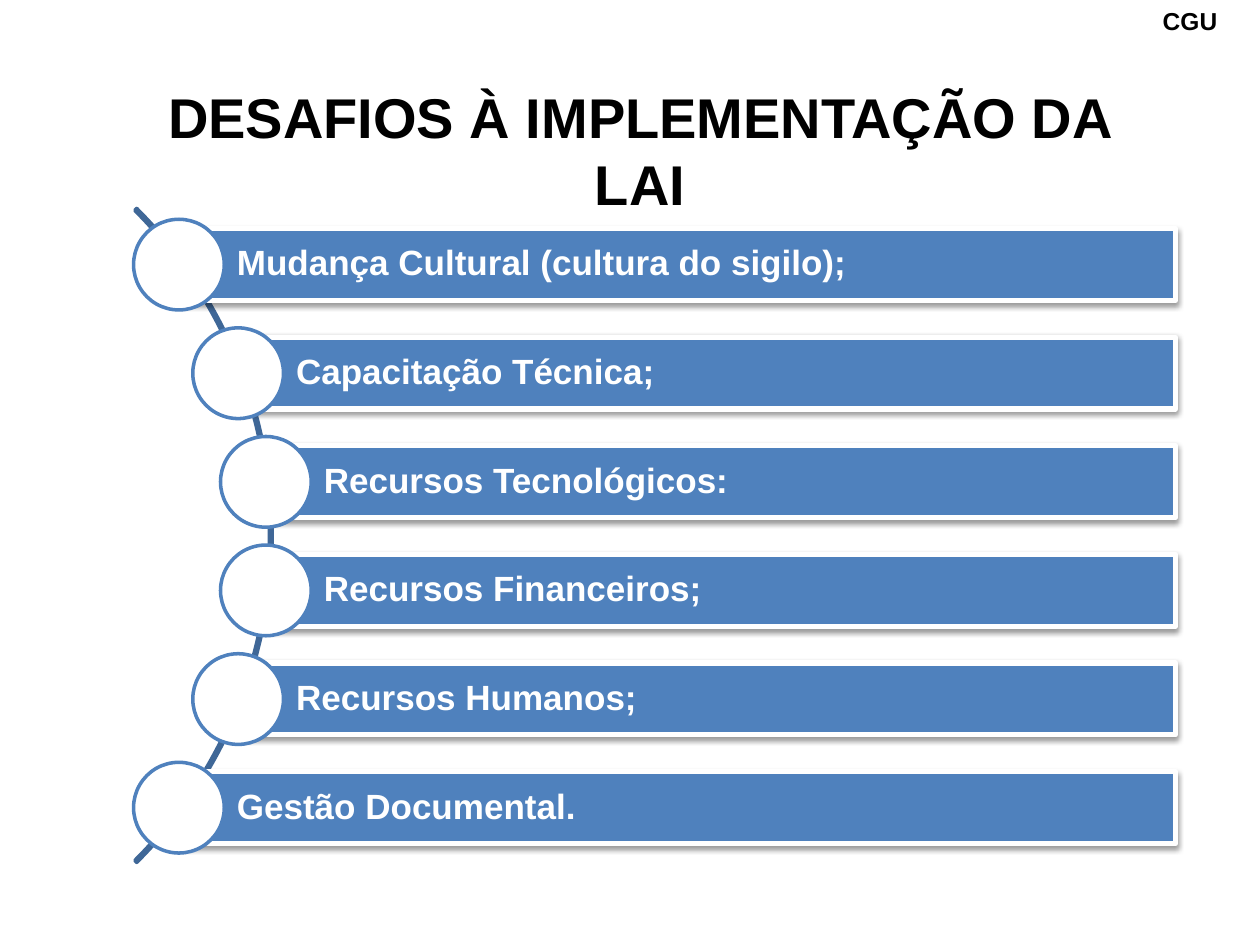
from pptx import Presentation
from pptx.dml.color import RGBColor
from pptx.enum.shapes import MSO_SHAPE
from pptx.enum.text import MSO_ANCHOR, PP_ALIGN
from pptx.oxml import parse_xml
from pptx.oxml.ns import nsdecls, qn
from pptx.util import Inches, Pt

ARC, BAR, CIRCLE = MSO_SHAPE.BLOCK_ARC, MSO_SHAPE.RECTANGLE, MSO_SHAPE.OVAL
MIDDLE = MSO_ANCHOR.MIDDLE
LEFT, CENTER = PP_ALIGN.LEFT, PP_ALIGN.CENTER

THEME = {
    "font": "Arial",
    "black": RGBColor(0x00, 0x00, 0x00),
    "white": RGBColor(0xFF, 0xFF, 0xFF),
    "blue": RGBColor(0x4F, 0x81, 0xBD),
    "arc": RGBColor(0x3F, 0x67, 0x97),
    "title": Pt(32),
    "item": Pt(20),
    "label": Pt(14),
}

CHALLENGES = [
    ("Mudança Cultural (cultura do sigilo);", 1.42),
    ("Capacitação Técnica;", 1.89),
    ("Recursos Tecnológicos:", 2.11),
    ("Recursos Financeiros;", 2.11),
    ("Recursos Humanos;", 1.89),
    ("Gestão Documental.", 1.42),
]
BAR_RIGHT, BAR_HEIGHT = 9.33, 0.57
FIRST_CENTER, LAST_CENTER = 2.1, 6.41
DIAMETER = 0.72
PITCH = (LAST_CENTER - FIRST_CENTER) / (len(CHALLENGES) - 1)

SHADOW = f"""<a:outerShdw {nsdecls("a")} blurRad="39370" dist="20320" dir="5400000" rotWithShape="0">
<a:srgbClr val="000000"><a:alpha val="38000"/></a:srgbClr></a:outerShdw>"""


def write_text(shape, text, size, color, alignment):
    frame = shape.text_frame
    frame.text = text
    paragraph = frame.paragraphs[0]
    paragraph.alignment = alignment
    font_format = {"name": THEME["font"], "size": THEME[size], "bold": True}
    for name, value in font_format.items():
        setattr(paragraph.font, name, value)
    paragraph.font.color.rgb = THEME[color]
    return frame


def add_outlined(kind, left, top, width, height, fill, line, line_width):
    shape = slide.shapes.add_shape(
        kind, Inches(left), Inches(top), Inches(width), Inches(height)
    )
    shape.shadow.inherit = False
    if fill:
        shape.fill.solid()
        shape.fill.fore_color.rgb = THEME[fill]
    else:
        shape.fill.background()
    shape.line.color.rgb = THEME[line]
    shape.line.width = Pt(line_width)
    return shape


presentation = Presentation()
presentation.slide_width = Inches(10)
presentation.slide_height = Inches(7.5)
slide = presentation.slides.add_slide(presentation.slide_layouts[5])

label = slide.shapes.add_textbox(Inches(9.13), 0, Inches(0.87), Inches(0.34))
write_text(label, "CGU", "label", "black", LEFT).word_wrap = True

title = slide.shapes.title
title_place = {
    "left": Inches(0.83),
    "top": Inches(0.52),
    "width": Inches(8.5),
    "height": Inches(1.33),
}
for name, value in title_place.items():
    setattr(title, name, value)
title_frame = write_text(
    title, "DESAFIOS À IMPLEMENTAÇÃO DA LAI", "title", "black", CENTER
)
title_frame.word_wrap = True
title_frame.vertical_anchor = MIDDLE

arc = add_outlined(ARC, -5.18, 0.58, 7.34, 7.34, None, "arc", 2)
for index, value in enumerate((189, 27, 0.003)):
    arc.adjustments[index] = value

bar_format = {
    "margin_left": Inches(0.46),
    "margin_right": Inches(0.06),
    "margin_top": Inches(0.06),
    "margin_bottom": Inches(0.06),
    "vertical_anchor": MIDDLE,
    "word_wrap": True,
}
for row, (text, left) in enumerate(CHALLENGES):
    center = FIRST_CENTER + row * PITCH
    bar = add_outlined(
        BAR, left, center - BAR_HEIGHT / 2, BAR_RIGHT - left, BAR_HEIGHT,
        "blue", "white", 3,
    )
    bar.element.spPr.find(qn("a:effectLst")).append(parse_xml(SHADOW))
    frame = write_text(bar, text, "item", "white", LEFT)
    frame.paragraphs[0].line_spacing = 0.9
    for name, value in bar_format.items():
        setattr(frame, name, value)
    add_outlined(
        CIRCLE, left - DIAMETER / 2, center - DIAMETER / 2, DIAMETER, DIAMETER,
        "white", "blue", 2,
    )

presentation.save("out.pptx")
